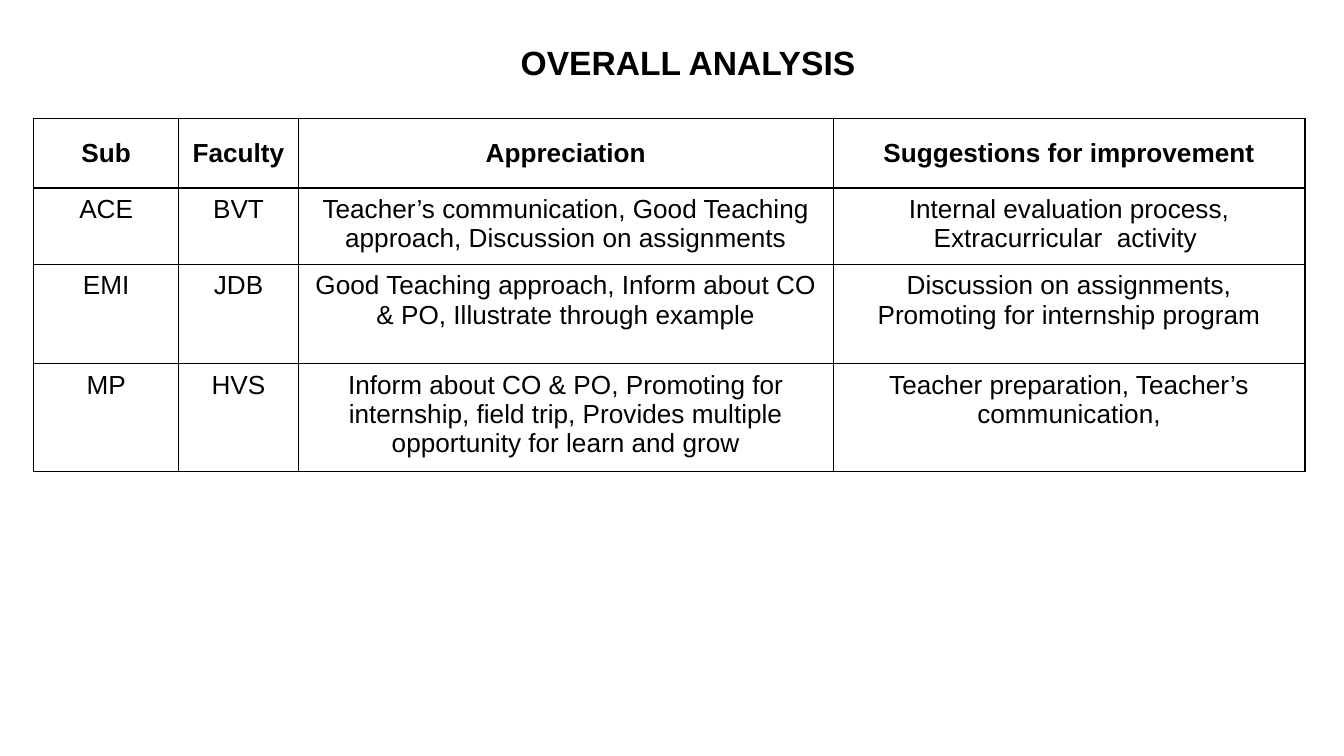
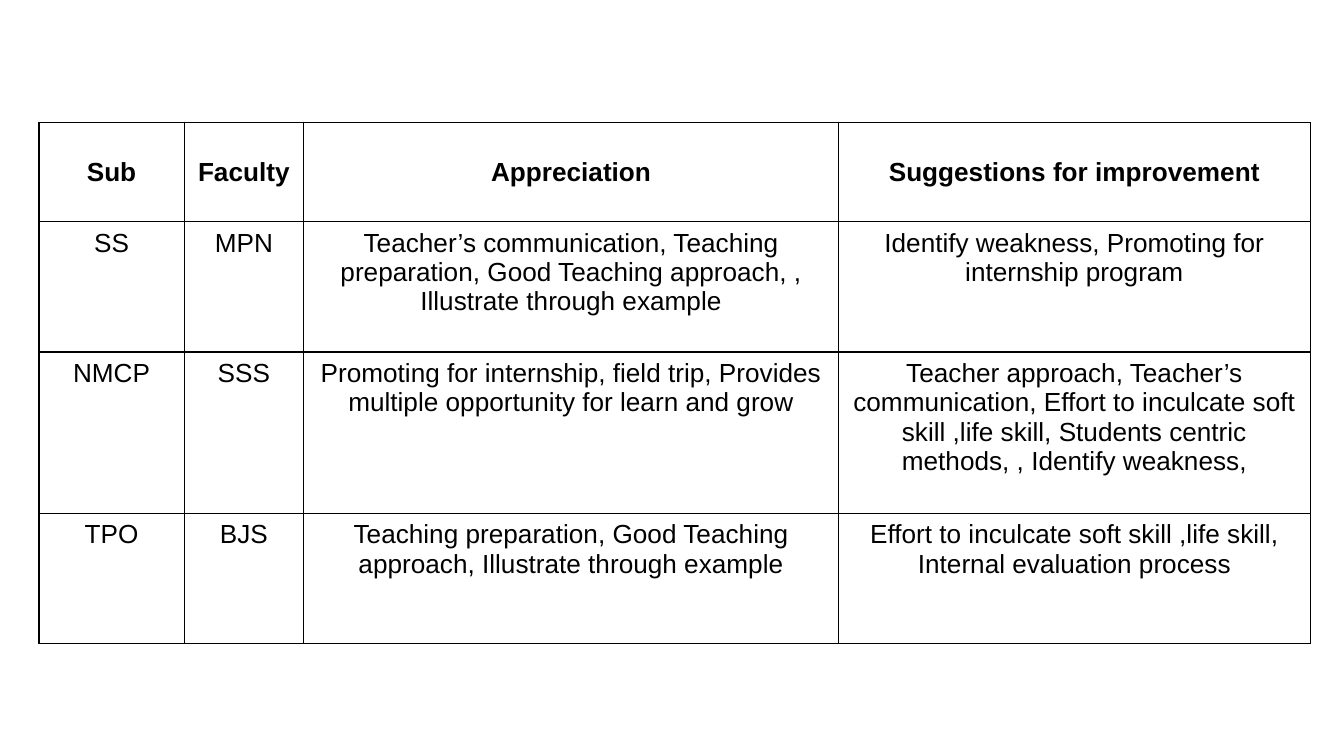
from lxml.etree import SubElement
from pptx import Presentation
from pptx.dml.color import RGBColor
from pptx.enum.text import MSO_ANCHOR as Anchor, PP_ALIGN as Align
from pptx.oxml.ns import qn
from pptx.util import Inches, Pt

BLACK = RGBColor(0x00, 0x00, 0x00)
WHITE = RGBColor(0xFF, 0xFF, 0xFF)
FONT = "Arial"
TITLE_SIZE, TABLE_SIZE = Pt(18), Pt(14)
BORDER_WIDTH = Pt(0.75)

SLIDE_WIDTH = Inches(10)
SLIDE_HEIGHT = SLIDE_WIDTH * 9 // 16

# Grid of the feedback tables, in inches
COLUMN_WIDTHS = (1.08, 0.89, 3.98, 3.51)
FIRST_ROW_HEIGHTS = (0.52, 0.53, 0.74, 0.74)
SECOND_ROW_HEIGHTS = (0.74, 0.97, 1.2, 0.97)

HEADER = ("Sub", "Faculty", "Appreciation", "Suggestions for improvement")

FIRST_SUBJECTS = (
    ("ACE", "BVT",
     "Teacher’s communication, Good Teaching approach, Discussion on assignments",
     "Internal evaluation process, Extracurricular  activity "),
    ("EMI", "JDB",
     "Good Teaching approach, Inform about CO & PO, Illustrate through example",
     "Discussion on assignments, Promoting for internship program"),
    ("MP", "HVS",
     "Inform about CO & PO, Promoting for internship, field trip, "
     "Provides multiple opportunity for learn and grow",
     "Teacher preparation, Teacher’s communication,"),
)
SECOND_SUBJECTS = (
    ("SS", "MPN",
     "Teacher’s communication, Teaching preparation, Good Teaching approach, , "
     "Illustrate through example",
     "Identify weakness, Promoting for internship program"),
    ("NMCP", "SSS",
     "Promoting for internship, field trip, Provides multiple opportunity "
     "for learn and grow",
     "Teacher approach, Teacher’s communication, Effort to inculcate soft skill "
     ",life skill, Students centric methods, , Identify weakness,"),
    ("TPO", "BJS",
     "Teaching preparation, Good Teaching approach, Illustrate through example",
     "Effort to inculcate soft skill ,life skill, Internal evaluation process"),
)


def write(frame, text, size, bold):
    """Write one centred paragraph."""
    para = frame.paragraphs[0]
    para.text = text
    para.alignment = Align.CENTER
    para.font.name = FONT
    para.font.size = size
    para.font.bold = bold
    para.font.color.rgb = BLACK
    # The paragraph mark takes the same size, so that rows do not grow
    SubElement(para._p, qn("a:endParaRPr"), sz=str(size.centipoints))


def add_borders(cell):
    """Draw a thin line on all four sides of a cell."""
    properties = cell._tc.get_or_add_tcPr()
    for index, side in enumerate(("a:lnL", "a:lnR", "a:lnT", "a:lnB")):
        line = properties.makeelement(qn(side), {"w": str(BORDER_WIDTH)})
        fill = SubElement(line, qn("a:solidFill"))
        SubElement(fill, qn("a:srgbClr"), val=str(BLACK))
        properties.insert(index, line)


def add_title(page, text, left, top, width, height):
    box = page.shapes.add_textbox(left, top, width, height)
    frame = box.text_frame
    frame.word_wrap = True
    frame.margin_top = frame.margin_bottom = Inches(0.1)
    write(frame, text, TITLE_SIZE, True)


def add_feedback_table(page, subjects, row_heights, left, top):
    """Place a header row and one row per subject."""
    rows = (HEADER, *subjects)
    table = page.shapes.add_table(len(rows), len(HEADER), left, top,
                                  Inches(sum(COLUMN_WIDTHS)),
                                  Inches(sum(row_heights))).table
    table.first_row = table.horz_banding = False
    for column, width in zip(table.columns, COLUMN_WIDTHS):
        column.width = Inches(width)
    for row_index, (row, texts) in enumerate(zip(table.rows, rows)):
        is_header = row_index == 0
        row.height = Inches(row_heights[row_index])
        for cell, text in zip(row.cells, texts):
            cell.fill.solid()
            cell.fill.fore_color.rgb = WHITE
            cell.vertical_anchor = Anchor.MIDDLE if is_header else Anchor.TOP
            write(cell.text_frame, text, TABLE_SIZE, is_header)
            add_borders(cell)


def main():
    deck = Presentation()
    deck.slide_width, deck.slide_height = SLIDE_WIDTH, SLIDE_HEIGHT
    blank = deck.slide_layouts[6]

    # Title and first three subjects
    page = deck.slides.add_slide(blank)
    add_title(page, "OVERALL ANALYSIS",
              Inches(0.46), Inches(0.21), Inches(9.32), Inches(0.45))
    add_feedback_table(page, FIRST_SUBJECTS, FIRST_ROW_HEIGHTS,
                       Inches(0.25), Inches(0.88))

    # Remaining subjects
    page = deck.slides.add_slide(blank)
    add_feedback_table(page, SECOND_SUBJECTS, SECOND_ROW_HEIGHTS,
                       Inches(0.29), Inches(0.91))

    deck.save("out.pptx")


if __name__ == "__main__":
    main()
